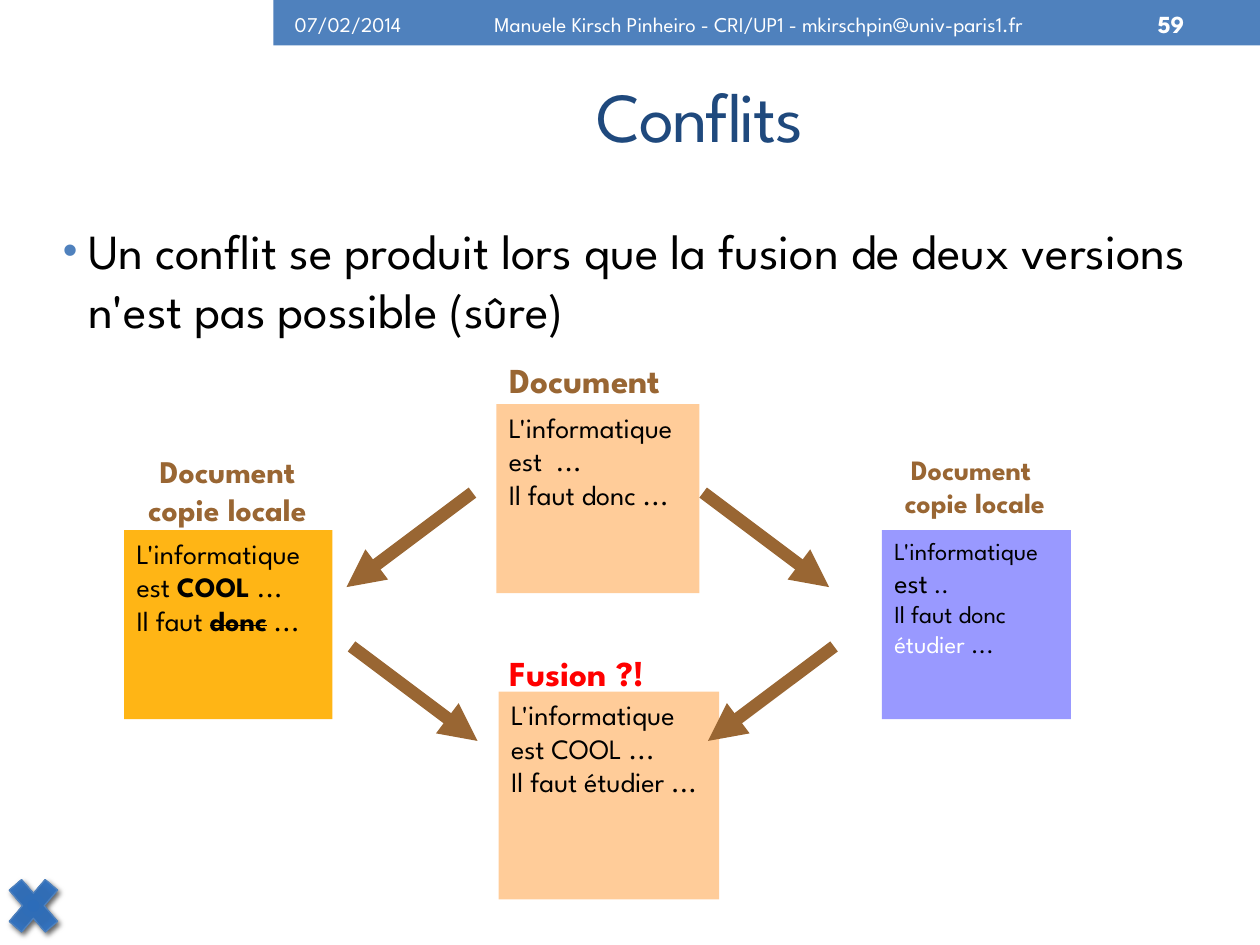
import pptx
import pptx.util
import pptx.dml.color
import pptx.enum.shapes
import pptx.enum.text
import pptx.oxml
from dataclasses import dataclass

Pt = pptx.util.Pt
Align = pptx.enum.text.PP_ALIGN
Anchor = pptx.enum.text.MSO_ANCHOR
Shape = pptx.enum.shapes.MSO_SHAPE
NAMESPACE = 'xmlns:a="http://schemas.openxmlformats.org/drawingml/2006/main"'


@dataclass(frozen=True)
class Theme:
    font: str = "League Spartan"
    blue: str = "4F81BD"
    navy: str = "1F497D"
    black: str = "000000"
    white: str = "FFFFFF"
    brown: str = "996633"
    red: str = "FF0000"
    peach: str = "FFCC99"
    amber: str = "FFB515"
    violet: str = "9999FF"
    cross_stops: tuple = ((0, "2C6CB9"), (34, "316DB5"), (70, "3679CA"), (100, "4F81BD"))
    title: int = 40
    body: int = 28
    heading: int = 20
    label: int = 18
    text: int = 16
    small: int = 14
    footer: int = 12


theme = Theme()
rgb = pptx.dml.color.RGBColor.from_string
deck = pptx.Presentation()
deck.slide_width, deck.slide_height = Pt(720), Pt(540)
page = deck.slides.add_slide(deck.slide_layouts[6])


def write(box, paragraphs, size, color, bold=False, align=Align.LEFT,
          anchor=Anchor.TOP, margins=(7.2, 3.6)):
    """Fill a box; each paragraph is a list of (text, format overrides) runs."""
    frame = box.text_frame
    side, edge = margins
    layout = {"word_wrap": True, "vertical_anchor": anchor,
              "margin_left": Pt(side), "margin_right": Pt(side),
              "margin_top": Pt(edge), "margin_bottom": Pt(edge)}
    for name, value in layout.items():
        setattr(frame, name, value)
    for index, runs in enumerate(paragraphs):
        para = frame.add_paragraph() if index else frame.paragraphs[0]
        para.alignment = align
        for text, changes in runs:
            span = para.add_run()
            span.text = text
            style = {"size": size, "color": color, "bold": bold} | changes
            font = {"name": theme.font, "size": Pt(style["size"]), "bold": style["bold"]}
            for name, value in font.items():
                setattr(span.font, name, value)
            span.font.color.rgb = rgb(style["color"])
            if style.get("strike"):
                span.font._element.set("strike", "sngStrike")


def add_rectangle(bounds, color):
    box = page.shapes.add_shape(Shape.RECTANGLE, *map(Pt, bounds))
    box.shadow.inherit = False
    box.fill.solid()
    box.fill.fore_color.rgb = rgb(color)
    box.line.fill.background()
    return box


# Header band
add_rectangle((156.24, 0, 563.76, 26), theme.blue)
header = [
    (161.3, 79.2, "07/02/2014", theme.footer, False, Align.LEFT),
    (229.7, 408.2, "Manuele Kirsch Pinheiro - CRI/UP1 - mkirschpin@univ-paris1.fr",
     theme.footer, False, Align.CENTER),
    (643.7, 40.3, "59", theme.small, True, Align.RIGHT),
]
for left, width, text, size, bold, align in header:
    box = page.shapes.add_textbox(Pt(left), Pt(1.5), Pt(width), Pt(24.5))
    write(box, [[(text, {})]], size, theme.white, bold, align, Anchor.MIDDLE)

# Title and bullet
title = page.shapes.add_textbox(Pt(116), Pt(15), Pt(568), Pt(101))
write(title, [[("Conflits", {})]], theme.title, theme.navy,
      align=Align.CENTER, anchor=Anchor.MIDDLE, margins=(0, 0))
title.text_frame.paragraphs[0].runs[0].font._element.set("spc", "-100")

body = page.shapes.add_textbox(Pt(36), Pt(126), Pt(648), Pt(350))
write(body, [[("Un conflit se produit lors que la fusion de deux versions "
               "n'est pas possible (sûre)", {})]],
      theme.body, theme.black, margins=(0, 0))
properties = body.text_frame.paragraphs[0]._p.get_or_add_pPr()
properties.set("marL", str(Pt(14.4)))
properties.set("indent", str(Pt(-14.4)))
for bullet in (f'<a:buClr {NAMESPACE}><a:srgbClr val="{theme.blue}"/></a:buClr>',
               f'<a:buSzPct {NAMESPACE} val="85000"/>',
               f'<a:buFont {NAMESPACE} typeface="Arial"/>',
               f'<a:buChar {NAMESPACE} char="•"/>'):
    properties.append(pptx.oxml.parse_xml(bullet))

# Document versions
versions = [
    ((283.7, 231, 116, 108), theme.peach, theme.text,
     [[("L'informatique est  ...", {})], [("Il faut donc ...", {})]]),
    ((71, 303, 119, 108), theme.amber, theme.text,
     [[("L'informatique est ", {}), ("COOL", {"bold": True}), (" ...", {})],
      [("Il faut ", {}), ("donc", {"bold": True, "strike": True}), (" ...", {})]]),
    ((504, 303, 108, 108), theme.violet, theme.small,
     [[("L'informatique ", {}), ("est", {"size": theme.text}), (" ..", {})],
      [("Il faut donc ", {}), ("étudier", {"color": theme.white}), (" ...", {})]]),
    ((285, 395.2, 126, 118.8), theme.peach, theme.text,
     [[("L'informatique est COOL ...", {})], [("Il faut étudier ...", {})]]),
]
for bounds, color, size, paragraphs in versions:
    write(add_rectangle(bounds, color), paragraphs, size, theme.black)

labels = [
    ((284.3, 201.5, 107.5, 28), ["Document"], theme.heading, theme.brown, Align.LEFT),
    ((54, 255, 152, 44), ["Document", "copie locale"], theme.label, theme.brown, Align.CENTER),
    ((504, 255, 106, 44), ["Document ", "copie locale"], theme.text, theme.brown, Align.CENTER),
    ((284.3, 368.5, 100, 28), ["Fusion ?!"], theme.heading, theme.red, Align.LEFT),
]
for bounds, lines, size, color, align in labels:
    box = page.shapes.add_textbox(*map(Pt, bounds))
    write(box, [[(line, {})] for line in lines], size, color, True, align)

# Arrows: all share the same slope, pointing left (-1) or right (1)
for left, top, direction in ((270, 281.5, -1), (401.8, 281.5, 1),
                             (476.6, 369.4, -1), (200.9, 369.4, 1)):
    arrow = page.shapes.add_connector(
        pptx.enum.shapes.MSO_CONNECTOR.STRAIGHT,
        Pt(left), Pt(top), Pt(left + 72 * direction), Pt(top + 54))
    arrow.line.color.rgb = rgb(theme.brown)
    arrow.line.width = Pt(7.2)
    arrow.line._get_or_add_ln().append(
        pptx.oxml.parse_xml(f'<a:tailEnd {NAMESPACE} type="triangle"/>'))
    arrow._element.spPr.append(pptx.oxml.parse_xml(f'<a:effectLst {NAMESPACE}/>'))

# Corner cross
cross = page.shapes.add_shape(Shape.MATH_MULTIPLY, Pt(-0.7), Pt(494.6), Pt(39.6), Pt(46))
cross.line.color.rgb = rgb(theme.blue)
cross.line.width = Pt(0.75)
cross.shadow.inherit = False
stops = "".join(f'<a:gs pos="{place * 1000}"><a:srgbClr val="{color}"/></a:gs>'
                for place, color in theme.cross_stops)
gradient = pptx.oxml.parse_xml(
    f'<a:gradFill {NAMESPACE} rotWithShape="1"><a:gsLst>{stops}</a:gsLst><a:path path="circle">'
    '<a:fillToRect l="100000" t="100000" r="100000" b="100000"/></a:path></a:gradFill>')
cross.line._get_or_add_ln().addprevious(gradient)
shadow = pptx.oxml.parse_xml(
    f'<a:outerShdw {NAMESPACE} blurRad="{Pt(3)}" dist="{Pt(2)}" dir="2700000" rotWithShape="0">'
    f'<a:srgbClr val="{theme.black}"><a:alpha val="60000"/></a:srgbClr></a:outerShdw>')
cross._element.spPr[-1].append(shadow)

deck.save("out.pptx")
